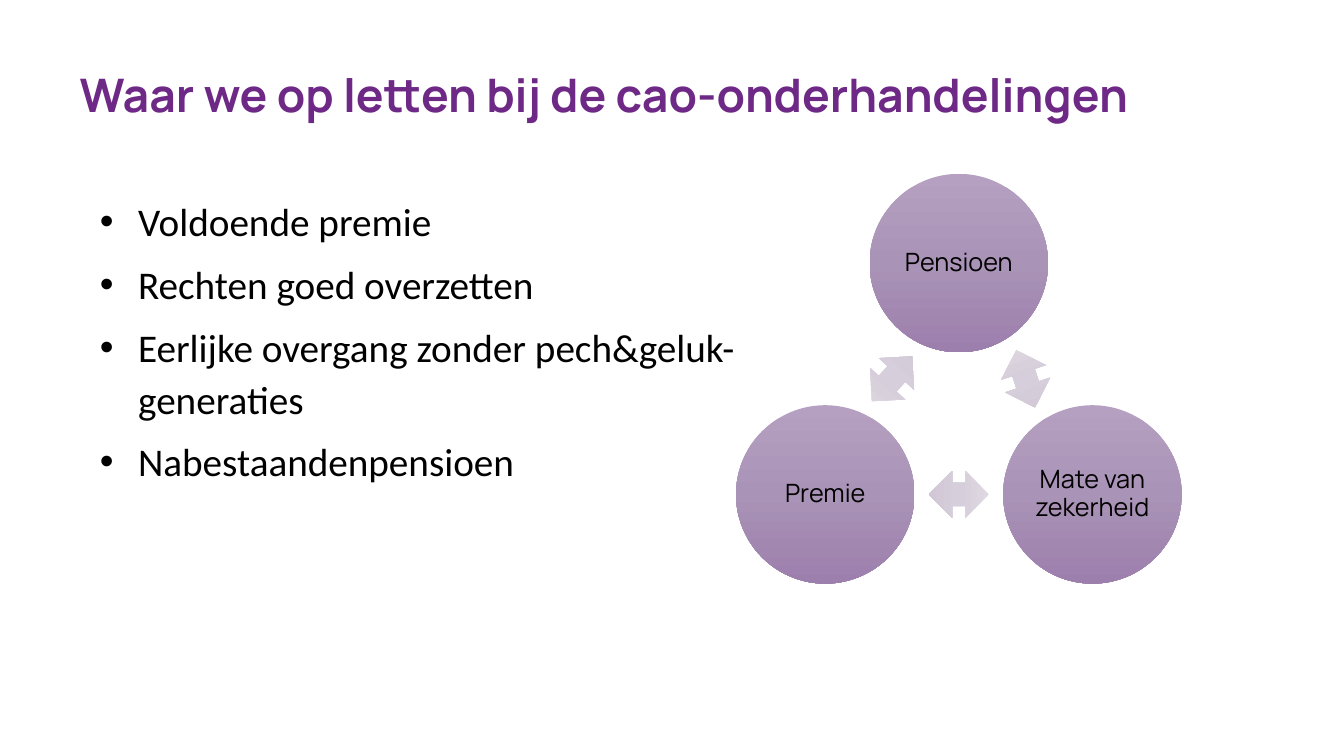
from dataclasses import dataclass
from math import cos, radians, sin
from typing import Any

from lxml.etree import SubElement
from pptx import Presentation
from pptx.dml.color import RGBColor
from pptx.enum.shapes import MSO_SHAPE as Preset
from pptx.enum.text import MSO_ANCHOR as Anchor, MSO_AUTO_SIZE as AutoSize, PP_ALIGN as Align
from pptx.oxml import parse_xml
from pptx.oxml.ns import nsdecls, qn
from pptx.util import Inches, Pt


@dataclass(frozen=True)
class Theme:
    heading_font: str = "Manrope"
    body_font: str = "Calibri"
    title_size: int = 33
    body_size: int = 28
    label_size: int = 18
    purple: str = "6E2986"
    black: str = "000000"
    circle_stops: tuple[str, ...] = ("B5A0C1", "A993B6", "9D7FAD")
    arrow_stops: tuple[str, ...] = ("DFD8E2", "D6CEDA", "D1C7D6")


@dataclass(frozen=True)
class Circle:
    label: str
    angle: float


@dataclass(frozen=True)
class Arrow:
    angle: float
    rotation: float


THEME = Theme()
TITLE = "Waar we op letten bij de cao-onderhandelingen"
BULLETS = (
    "Voldoende premie",
    "Rechten goed overzetten",
    "Eerlijke overgang zonder pech&geluk-generaties",
    "Nabestaandenpensioen",
)
CIRCLES = (Circle("Pensioen", -90), Circle("Mate van zekerheid", 30), Circle("Premie", 150))
ARROWS = (Arrow(-30, 341.9), Arrow(90, 90), Arrow(210, 221.9))
CENTER_X, CENTER_Y = 9.51, 4.14
CIRCLE_ORBIT = 1.53
ARROW_ORBIT = CIRCLE_ORBIT / 2
CIRCLE_SIZE = 1.77
ARROW_WIDTH, ARROW_HEIGHT = 0.47, 0.6


def apply_format(target: Any, values: dict[str, Any]) -> None:
    for name, value in values.items():
        setattr(target, name, value)


def place(shape: Any, left: float, top: float, width: float, height: float) -> None:
    names = ("left", "top", "width", "height")
    lengths = map(Inches, (left, top, width, height))
    apply_format(shape, dict(zip(names, lengths)))


def set_frame(shape: Any, margin: float, anchor: Any) -> None:
    sides = ("margin_left", "margin_top", "margin_right", "margin_bottom")
    values = dict.fromkeys(sides, Inches(margin))
    values |= {"word_wrap": True, "auto_size": AutoSize.NONE, "vertical_anchor": anchor}
    apply_format(shape.text_frame, values)


def write(paragraph: Any, text: str, font: str, size: int, color: str, bold: bool,
          layout: dict[str, Any]) -> None:
    run = paragraph.add_run()
    run.text = text
    apply_format(run.font, {"name": font, "size": Pt(size), "bold": bold})
    run.font.color.rgb = RGBColor.from_string(color)
    apply_format(paragraph, {"space_before": Pt(0)} | layout)


def add_bullet(paragraph: Any) -> None:
    properties = paragraph._p.get_or_add_pPr()
    properties.set("marL", str(Inches(0.58)))
    properties.set("indent", str(Inches(-0.38)))
    SubElement(properties, qn("a:buFont")).set("typeface", "Arial")
    SubElement(properties, qn("a:buChar")).set("char", "•")


def add_gradient_shape(slide: Any, preset: Any, angle: float, orbit: float,
                       width: float, height: float, colors: tuple[str, ...]) -> Any:
    left = CENTER_X + orbit * cos(radians(angle)) - width / 2
    top = CENTER_Y + orbit * sin(radians(angle)) - height / 2
    shape = slide.shapes.add_shape(preset, *map(Inches, (left, top, width, height)))
    stops = "".join(
        f'<a:gs pos="{index * 50000}"><a:srgbClr val="{color}"/></a:gs>'
        for index, color in enumerate(colors)
    )
    gradient = parse_xml(
        f'<a:gradFill {nsdecls("a")} rotWithShape="1"><a:gsLst>{stops}</a:gsLst>'
        '<a:lin ang="5400000" scaled="0"/></a:gradFill>'
    )
    shape._element.spPr.find(qn("a:prstGeom")).addnext(gradient)
    shape.line.fill.background()
    shape.shadow.inherit = False
    return shape


def add_circle(slide: Any, circle: Circle) -> None:
    shape = add_gradient_shape(slide, Preset.OVAL, circle.angle, CIRCLE_ORBIT,
                               CIRCLE_SIZE, CIRCLE_SIZE, THEME.circle_stops)
    set_frame(shape, 0.03, Anchor.MIDDLE)
    write(shape.text_frame.paragraphs[0], circle.label, THEME.heading_font, THEME.label_size,
          THEME.black, False, {"alignment": Align.CENTER, "line_spacing": 0.9})


def add_arrow(slide: Any, arrow: Arrow) -> None:
    shape = add_gradient_shape(slide, Preset.UP_DOWN_ARROW, arrow.angle, ARROW_ORBIT,
                               ARROW_WIDTH, ARROW_HEIGHT, THEME.arrow_stops)
    shape.rotation = arrow.rotation


def fill_title(title: Any) -> None:
    place(title, 0.79, 0.26, 11.76, 1.42)
    set_frame(title, 0, Anchor.MIDDLE)
    write(title.text_frame.paragraphs[0], TITLE, THEME.heading_font, THEME.title_size,
          THEME.purple, True, {"alignment": Align.LEFT, "line_spacing": 0.9})


def fill_body(body: Any) -> None:
    place(body, 0.79, 1.91, 7.85, 4)
    set_frame(body, 0, Anchor.TOP)
    frame = body.text_frame
    for index, text in enumerate(BULLETS):
        paragraph = frame.add_paragraph() if index else frame.paragraphs[0]
        add_bullet(paragraph)
        write(paragraph, text, THEME.body_font, THEME.body_size, THEME.black, False,
              {"level": 1, "line_spacing": 1.1, "space_after": Pt(8)})


def main() -> None:
    presentation = Presentation()
    apply_format(presentation, {"slide_width": Inches(13.33), "slide_height": Inches(7.5)})
    slide = presentation.slides.add_slide(presentation.slide_layouts[1])
    fill_title(slide.shapes.title)
    fill_body(slide.placeholders[1])
    for circle, arrow in zip(CIRCLES, ARROWS):
        add_circle(slide, circle)
        add_arrow(slide, arrow)
    presentation.save("out.pptx")


if __name__ == "__main__":
    main()
